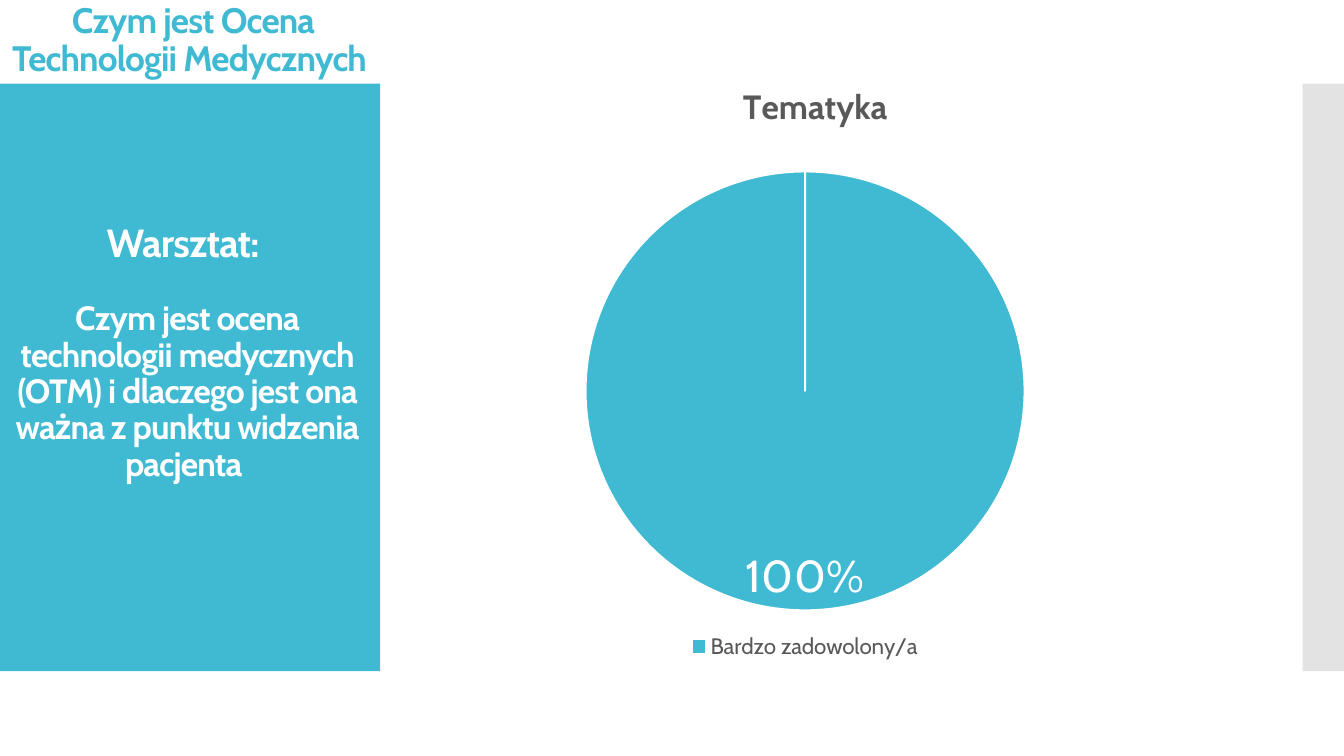
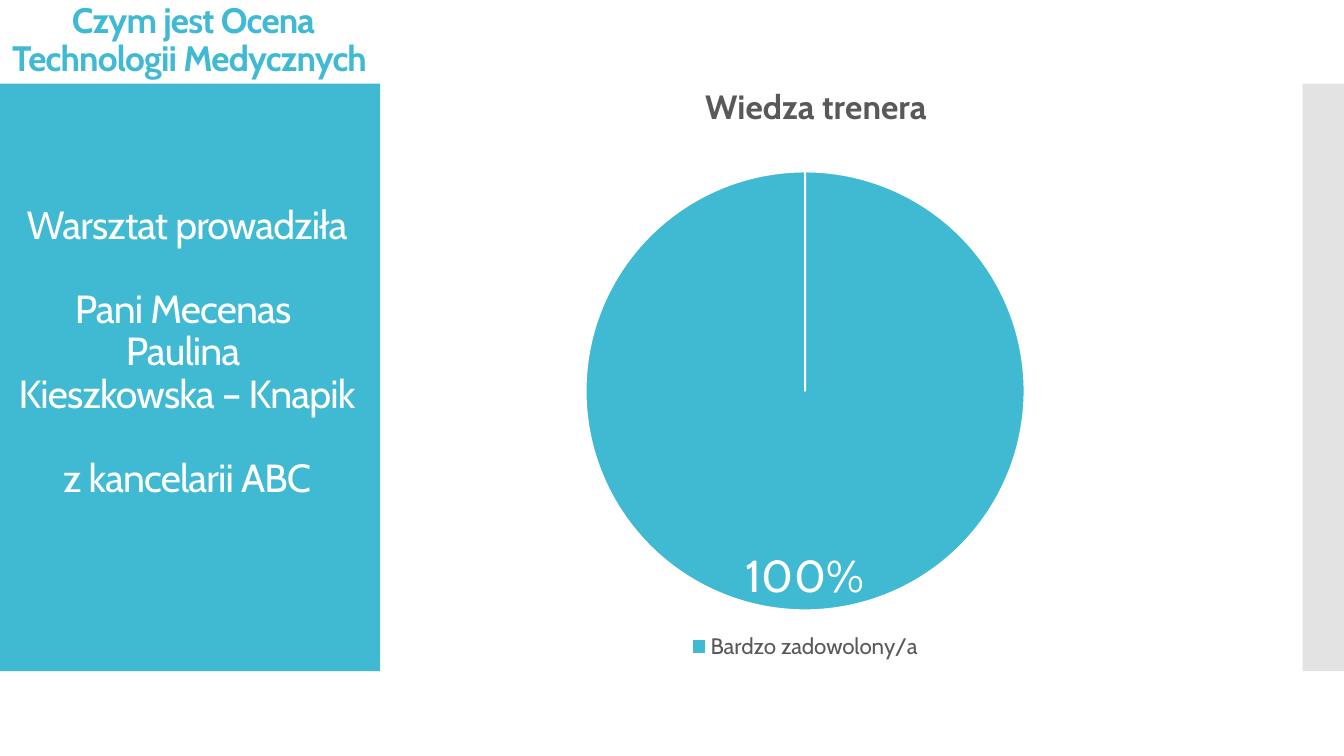
from dataclasses import dataclass
from lxml.etree import SubElement
from pptx import Presentation
from pptx.chart.chart import Chart
from pptx.chart.data import CategoryChartData
from pptx.dml.color import RGBColor
from pptx.enum.chart import XL_CHART_TYPE, XL_LABEL_POSITION, XL_LEGEND_POSITION
from pptx.enum.shapes import MSO_SHAPE
from pptx.enum.text import MSO_ANCHOR, MSO_AUTO_SIZE, PP_ALIGN
from pptx.oxml import parse_xml
from pptx.oxml.ns import nsdecls, qn
from pptx.slide import Slide
from pptx.text.text import Font, TextFrame
from pptx.util import Inches, Pt

FACE = "Cabin"
COLORS = {"teal": "40BAD2", "gray": "C8C8C8", "text": "595959", "white": "FFFFFF"}
HEAD = "Czym jest Ocena Technologii Medycznych "


@dataclass
class Line:
    text: str
    size: float = 28
    bold: bool = False
    color: str = "white"
    gap: float = 0


@dataclass
class Band:
    left: float
    width: float
    color: str
    alpha: int = 100


@dataclass
class Page:
    topic: str
    left: float
    lines: list[Line]


BANDS = [Band(0, 3.77, "teal"), Band(12.92, 0.42, "gray", 50)]
PAGES = [
    Page("Tematyka", 0.41, [
        Line("Warsztat: ", bold=True),
        Line("Czym jest ocena technologii medycznych (OTM) i dlaczego jest ona "
             "ważna z punktu widzenia pacjenta ", 24, True, gap=26),
    ]),
    Page("Wiedza trenera", 0.36, [
        Line("Warsztat prowadziła"),
        Line("Pani Mecenas ", gap=30),
        Line("Paulina "),
        Line("Kieszkowska – Knapik"),
        Line("z kancelarii ABC", gap=30),
    ]),
]


def style(font: Font, size: float, color: str, bold: bool = False) -> None:
    font.name = FACE
    font.size = Pt(size)
    font.bold = bold
    font.color.rgb = RGBColor.from_string(COLORS[color])


def write(frame: TextFrame, lines: list[Line]) -> None:
    frame.word_wrap = True
    frame.auto_size = MSO_AUTO_SIZE.NONE
    frame.vertical_anchor = MSO_ANCHOR.MIDDLE
    for i, line in enumerate(lines):
        para = frame.add_paragraph() if i else frame.paragraphs[0]
        para.alignment = PP_ALIGN.CENTER
        para.line_spacing = 0.9
        para.space_before = Pt(line.gap)
        run = para.add_run()
        run.text = line.text
        style(run.font, line.size, line.color, line.bold)
        run.font._element.set("spc", "-60")


def draw_band(slide: Slide, band: Band) -> None:
    shape = slide.shapes.add_shape(
        MSO_SHAPE.RECTANGLE, Inches(band.left), Inches(0.83),
        Inches(band.width), Inches(5.83))
    shape.shadow.inherit = False
    shape.fill.solid()
    shape.fill.fore_color.rgb = RGBColor.from_string(COLORS[band.color])
    shape.line.fill.background()
    if band.alpha < 100:
        tint = shape.element.spPr.find(".//" + qn("a:srgbClr"))
        SubElement(tint, qn("a:alpha")).set("val", str(band.alpha * 1000))


def place(parent, index: int, target: str, **box: float) -> None:
    for old in parent.findall(qn("c:layout")):
        parent.remove(old)
    inner = f'<c:layoutTarget val="{target}"/>' if target else ""
    modes = "".join(f'<c:{key}Mode val="edge"/>' for key in "xy")
    sizes = "".join(f'<c:{key} val="{val}"/>' for key, val in box.items())
    parent.insert(index, parse_xml(
        f'<c:layout {nsdecls("c")}><c:manualLayout>{inner}{modes}{sizes}'
        "</c:manualLayout></c:layout>"))


def format_pie(chart: Chart, page: Page) -> None:
    chart.font.name = FACE
    chart.font.size = Pt(10)
    chart.has_title = True
    title = chart.chart_title
    title.text_frame.text = page.topic
    style(title.text_frame.paragraphs[0].font, 24, "text", True)
    title.include_in_layout = False
    place(title.element, 1, "", x=page.left, y=0)
    place(chart.element.find(".//" + qn("c:plotArea")), 0, "inner",
          x=0.21, y=0.16, w=0.58, h=0.75)

    chart.has_legend = True
    chart.legend.position = XL_LEGEND_POSITION.BOTTOM
    chart.legend.include_in_layout = False
    style(chart.legend.font, 16, "text")

    plot = chart.plots[0]
    plot.vary_by_categories = True
    wedge = plot.series[0].points[0].format
    wedge.fill.solid()
    wedge.fill.fore_color.rgb = RGBColor.from_string(COLORS["teal"])
    wedge.line.color.rgb = RGBColor.from_string(COLORS["white"])
    wedge.line.width = Pt(1.5)

    plot.has_data_labels = True
    labels = plot.data_labels
    labels.show_value = False
    labels.show_percentage = True
    labels.number_format = "0%"
    labels.number_format_is_linked = False
    labels.position = XL_LABEL_POSITION.INSIDE_END
    style(labels.font, 32, "white")


def draw_pie(slide: Slide, page: Page) -> None:
    data = CategoryChartData()
    data.categories = ["Bardzo zadowolony/a"]
    data.add_series("Series 1", [100])
    frame = slide.shapes.add_chart(
        XL_CHART_TYPE.PIE, Inches(4.23), Inches(0.76),
        Inches(7.51), Inches(5.83), data)
    format_pie(frame.chart, page)


def build(slide: Slide, page: Page) -> None:
    for band in BANDS:
        draw_band(slide, band)
    title = slide.shapes.title
    title.left, title.top = Inches(0), Inches(0.05)
    title.width, title.height = Inches(3.83), Inches(0.72)
    write(title.text_frame, [Line(HEAD, 25.2, True, "teal")])
    draw_pie(slide, page)
    body = slide.shapes.add_textbox(
        Inches(0), Inches(1.23), Inches(3.71), Inches(5.03))
    body.text_frame.margin_bottom = Inches(0.53)
    write(body.text_frame, page.lines)


def main() -> None:
    deck = Presentation()
    deck.slide_width, deck.slide_height = Inches(13.33), Inches(7.5)
    for page in PAGES:
        build(deck.slides.add_slide(deck.slide_layouts[5]), page)
    deck.save("out.pptx")


if __name__ == "__main__":
    main()
